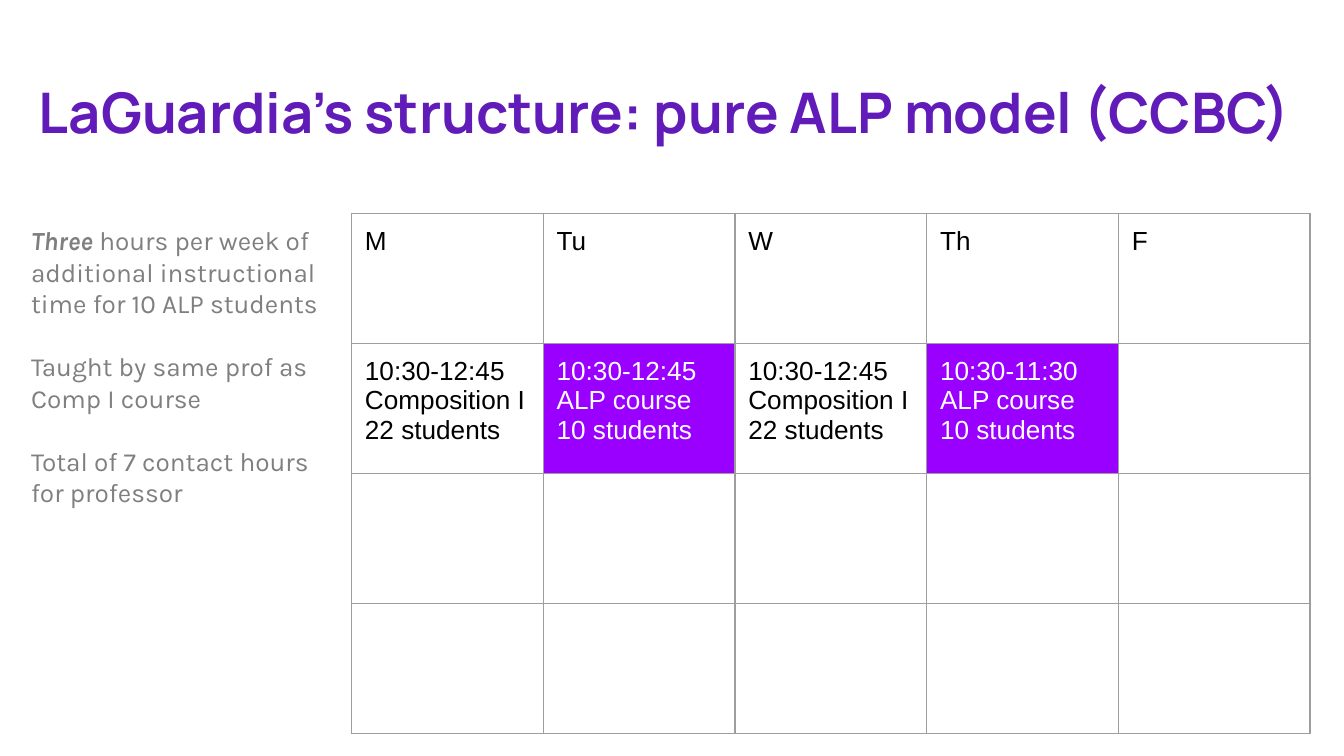
from lxml.etree import SubElement
from pptx import Presentation
from pptx.dml.color import RGBColor
from pptx.enum.text import MSO_ANCHOR as Anchor, MSO_AUTO_SIZE as Fit, PP_ALIGN as Align
from pptx.oxml.ns import qn
from pptx.util import Pt

INSET = Pt(7.2)
PURPLE, VIOLET, GREY, RULE = "611BB8", "9900FF", "7F7F7F", "9E9E9E"
BLACK, WHITE = "000000", "FFFFFF"

COMP = "10:30-12:45\nComposition I\n22 students"
ALP = "{}\nALP course\n10 students"
WEEK = [
    ["M", "Tu", "W", "Th", "F"],
    [COMP, ALP.format("10:30-12:45"), COMP, ALP.format("10:30-11:30"), ""],
    [""] * 5,
    [""] * 5,
]
NOTES = [
    [("Three", True),
     (" hours per week of additional instructional time for 10 ALP students", False)],
    [("Taught by same prof as Comp I course", False)],
    [("Total of 7 contact hours for professor", False)],
]


def color(code):
    return RGBColor.from_string(code)


def style(font, name, size, code):
    font.name, font.size = name, Pt(size)
    font.color.rgb = color(code)


def place(shape, left, top, width, height, anchor):
    """Move a placeholder and set up its text frame."""
    shape.left, shape.top = Pt(left), Pt(top)
    shape.width, shape.height = Pt(width), Pt(height)
    frame = shape.text_frame
    frame.margin_left = frame.margin_right = INSET
    frame.margin_top = frame.margin_bottom = INSET
    frame.word_wrap, frame.auto_size = True, Fit.NONE
    frame.vertical_anchor = anchor
    return frame


def add_title(shape, text):
    frame = place(shape, 13.7, 35.3, 696, 49, Anchor.MIDDLE)
    frame.text = text
    para = frame.paragraphs[0]
    para.alignment = Align.LEFT
    style(para.font, "Manrope", 30, PURPLE)
    para.font.bold = True


def add_notes(shape, notes):
    frame = place(shape, 9.4, 113, 171.4, 288, Anchor.TOP)
    for i, parts in enumerate(notes):
        para = frame.paragraphs[0] if i == 0 else frame.add_paragraph()
        para.alignment = Align.LEFT
        para.line_spacing = Pt(16.9)
        para.space_before = Pt(16.9 if i else 0)
        style(para.font, "Karla", 14, GREY)
        props = para._p.get_or_add_pPr()
        props.set("marL", "0")
        props.set("indent", "0")
        bullet = props.makeelement(qn("a:buNone"), {})
        props.find(qn("a:defRPr")).addprevious(bullet)
        for text, strong in parts:
            run = para.add_run()
            run.text = text
            if strong:
                run.font.bold = run.font.italic = True


def add_borders(cell):
    props = cell._tc.get_or_add_tcPr()
    for side in ("lnL", "lnR", "lnT", "lnB"):
        line = SubElement(props, qn(f"a:{side}"), w=str(Pt(0.75)))
        fill = SubElement(line, qn("a:solidFill"))
        SubElement(fill, qn("a:srgbClr"), val=RULE)


def fill_cell(cell, text):
    cell.margin_left = cell.margin_right = INSET
    cell.margin_top = cell.margin_bottom = INSET
    add_borders(cell)
    is_alp = "ALP" in text
    if is_alp:
        cell.fill.solid()
        cell.fill.fore_color.rgb = color(VIOLET)
    else:
        cell.fill.background()
    cell.text = text
    for para in cell.text_frame.paragraphs:
        style(para.font, "Arial", 14, WHITE if is_alp else BLACK)


def add_week(slide, week):
    rows, cols = len(week), len(week[0])
    wide, high = 102.7, 69.65
    table = slide.shapes.add_table(
        rows, cols, Pt(188.3), Pt(114.3), Pt(wide * cols), Pt(high * rows)).table
    table.first_row = table.horz_banding = False
    for col in table.columns:
        col.width = Pt(wide)
    for row, texts in zip(table.rows, week):
        row.height = Pt(high)
        for cell, text in zip(row.cells, texts):
            fill_cell(cell, text)


def main():
    deck = Presentation()
    deck.slide_width, deck.slide_height = Pt(720), Pt(405)
    slide = deck.slides.add_slide(deck.slide_layouts[1])
    add_title(slide.shapes.title, "LaGuardia’s structure: pure ALP model (CCBC)")
    add_week(slide, WEEK)
    add_notes(slide.placeholders[1], NOTES)
    deck.save("out.pptx")


if __name__ == "__main__":
    main()
